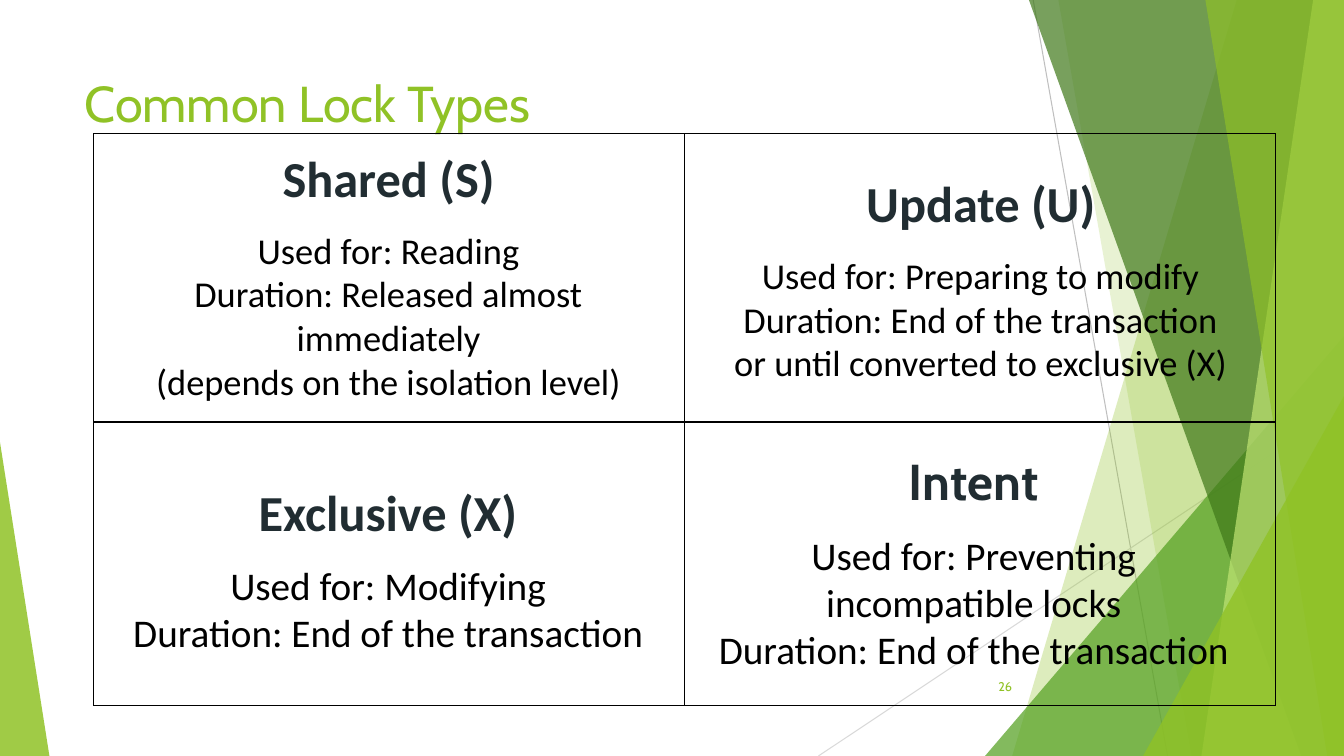
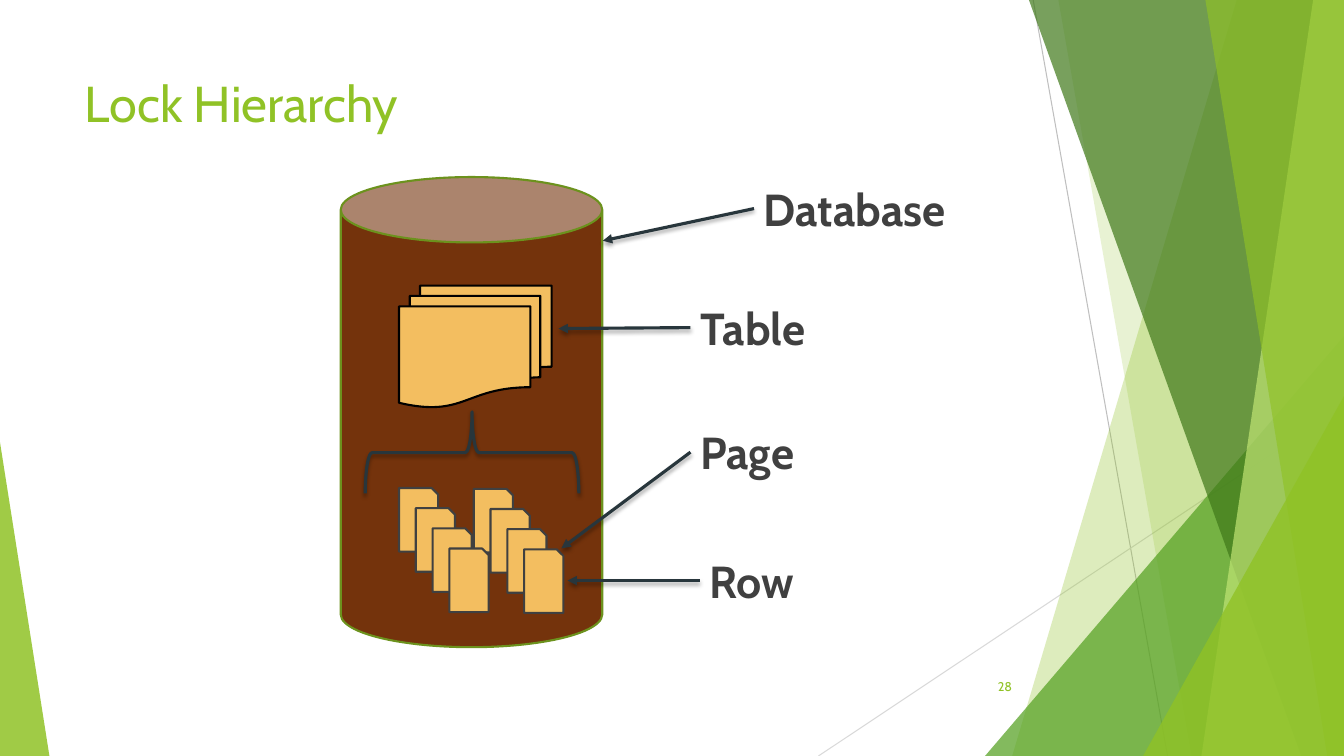
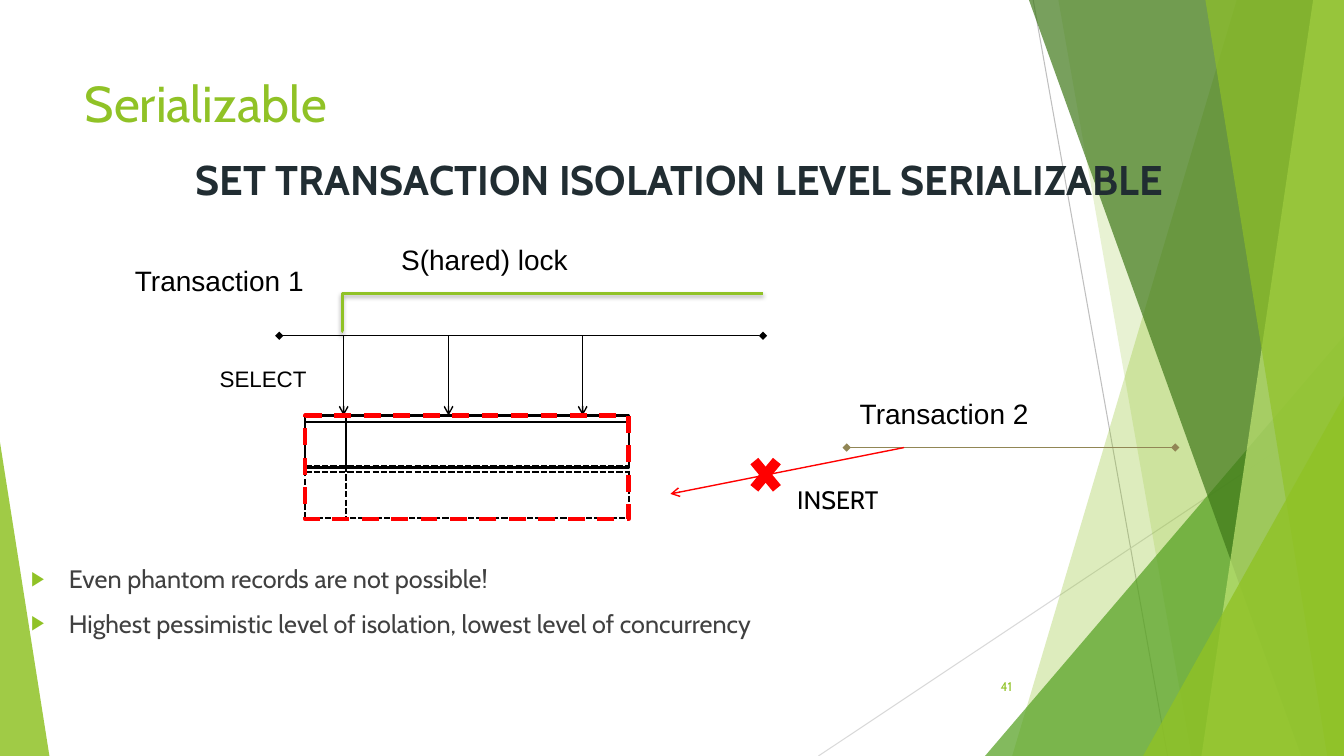
import dataclasses
import typing

import lxml.etree
import pptx
import pptx.dml.color
import pptx.enum.dml
import pptx.enum.shapes
import pptx.enum.text
import pptx.oxml.ns
import pptx.util

Pt = pptx.util.Pt
qn = pptx.oxml.ns.qn
SHAPE = pptx.enum.shapes.MSO_SHAPE
LINK = pptx.enum.shapes.MSO_CONNECTOR
DASH = pptx.enum.dml.MSO_LINE
ALIGN = pptx.enum.text.PP_ALIGN
ANCHOR = pptx.enum.text.MSO_ANCHOR
Box = tuple[float, float, float, float]
Spot = tuple[float, float]

WIDE, HIGH = 960, 540
GREEN, INK, SLATE, GREY = "90C226", "212D32", "28363C", "404040"
BLACK, RED, SAND, BROWN = "000000", "FF0000", "F3BE60", "74330C"
HEAD, BODY, PLAIN = "Cabin", "Calibri", "Arial"


@dataclasses.dataclass(frozen=True)
class Band:
    """A full-height strip that runs to the right edge."""
    top: float
    foot: float
    color: str
    alpha: int


@dataclasses.dataclass(frozen=True)
class Wedge:
    box: Box
    tip: int
    color: str
    alpha: int


@dataclasses.dataclass(frozen=True)
class Font:
    size: float
    name: str = HEAD
    color: str = BLACK
    bold: bool = False


@dataclasses.dataclass(frozen=True)
class Lock:
    box: Box
    name: str
    lines: tuple[str, ...]
    size: float
    face: str = BODY


@dataclasses.dataclass(frozen=True)
class Level:
    name: str
    left: float
    top: float
    target: Spot


@dataclasses.dataclass(frozen=True)
class Note:
    text: str
    box: Box
    font: Font


BACKDROP = (
    Band(883.4, 723, GREEN, 30),
    Band(756, 851, GREEN, 20),
    Wedge((703.6, 240, 256.4, 300), 1, "54A021", 72),
    Band(735, 929.5, "3F7819", 70),
    Band(938, 858.2, "C0E474", 70),
    Band(861, 948, GREEN, 65),
    Wedge((816.5, 283, 143.5, 257), 1, GREEN, 80),
    Wedge((0, 316, 35.3, 224), 0, GREEN, 85),
)
RULES = (
    ((738, 0), (834, 540), "BFBFBF"),
    ((960, 290), (584.6, 540), "D9D9D9"),
)
LOCKS = (
    Lock((70.6, 101.5, 414, 191.5), "Shared (S)",
         ("Used for: Reading", "Duration: Released almost immediately",
          "(depends on the isolation level)"), 26),
    Lock((509.8, 119.5, 381.6, 160), "Update (U)",
         ("Used for: Preparing to modify",
          "Duration: End of the transaction or until converted to exclusive (X)"), 26),
    Lock((86.4, 340, 381.6, 133), "Exclusive (X)",
         ("Used for: Modifying", "Duration: End of the transaction"), 28),
    Lock((504, 318.2, 383, 167), "Intent",
         ("Used for: Preventing incompatible locks",
          "Duration: End of the transaction"), 28, HEAD),
)
LEVELS = (
    Level("Database", 538.6, 126, (430.6, 172)),
    Level("Table", 493.2, 211, (398.9, 234.7)),
    Level("Page", 493.2, 300, (401, 391.7)),
    Level("Row", 499.7, 391.7, (405.4, 414.7)),
)
NOTES = (
    Note("Transaction 1", (89.3, 185, 141.8, 31.7), Font(20, PLAIN)),
    Note("S(hared) lock", (279.4, 170, 181.4, 31.7), Font(20, PLAIN)),
    Note("SELECT", (149.8, 257, 92.2, 26.6), Font(16, PLAIN)),
    Note("INSERT", (562.3, 342.7, 82, 28.8), Font(18)),
    Note("Transaction 2", (607, 279.4, 165, 31.7), Font(20, PLAIN)),
)


def tint(value: str) -> pptx.dml.color.RGBColor:
    return pptx.dml.color.RGBColor.from_string(value)


def node(parent: typing.Any, tag: str, **attrs: object) -> typing.Any:
    return lxml.etree.SubElement(
        parent, qn(tag), {key: str(val) for key, val in attrs.items()})


def soften(effects: typing.Any) -> None:
    """Put a soft drop shadow in an effect list."""
    drop = node(effects, "a:outerShdw", blurRad=Pt(3), dist=Pt(2),
                dir=5400000, rotWithShape=0)
    node(node(drop, "a:srgbClr", val=BLACK), "a:alpha", val=35000)


def paint(shape: typing.Any, fill: str = "", line: str = "", width: float = 1.5,
          alpha: int = 100) -> None:
    shape.shadow.inherit = False
    if fill:
        shape.fill.solid()
        shape.fill.fore_color.rgb = tint(fill)
        if alpha < 100:
            color = shape.element.spPr.find(qn("a:solidFill"))[0]
            node(color, "a:alpha", val=alpha * 1000)
    else:
        shape.fill.background()
    if line:
        shape.line.color.rgb = tint(line)
        shape.line.width = Pt(width)
    else:
        shape.line.fill.background()


def add_shape(slide: typing.Any, kind: typing.Any, box: Box, fill: str = "",
              line: str = "", width: float = 1.5) -> typing.Any:
    shape = slide.shapes.add_shape(kind, *map(Pt, box))
    paint(shape, fill, line, width)
    return shape


def add_line(slide: typing.Any, start: Spot, end: Spot, color: str = BLACK,
             width: float = 1, head: str = "", tail: str = "", soft: bool = False,
             kind: typing.Any = LINK.STRAIGHT) -> typing.Any:
    line = slide.shapes.add_connector(kind, *map(Pt, start + end))
    line.line.color.rgb = tint(color)
    line.line.width = Pt(width)
    props = line.element.spPr
    for tag, mark in (("a:headEnd", head), ("a:tailEnd", tail)):
        if mark:
            node(props.find(qn("a:ln")), tag, type=mark)
    effects = node(props, "a:effectLst")
    if soft:
        soften(effects)
    return line


def style(para: typing.Any, font: Font, align: typing.Any = ALIGN.LEFT) -> None:
    para.alignment = align
    para.font.size = Pt(font.size)
    para.font.name = font.name
    para.font.bold = font.bold
    para.font.color.rgb = tint(font.color)


def add_text(slide: typing.Any, box: Box, lines: typing.Sequence[tuple[str, Font]],
             align: typing.Any = ALIGN.LEFT) -> typing.Any:
    """Add a text box with one paragraph for each line."""
    label = slide.shapes.add_textbox(*map(Pt, box))
    frame = label.text_frame
    frame.word_wrap = True
    frame.text = "\n".join(text for text, _ in lines)
    for para, (_, font) in zip(frame.paragraphs, lines):
        style(para, font, align)
    return label


def place(shape: typing.Any, box: Box) -> None:
    shape.left, shape.top, shape.width, shape.height = map(Pt, box)
    frame = shape.text_frame
    frame.auto_size = pptx.enum.text.MSO_AUTO_SIZE.NONE
    frame.vertical_anchor = ANCHOR.TOP


def add_slide(deck: typing.Any, layout: int, title: str, number: int) -> typing.Any:
    slide = deck.slides.add_slide(deck.slide_layouts[layout])
    place(slide.shapes.title, (53.3, 48.2, 676.8, 103.7))
    slide.shapes.title.text_frame.text = title
    style(slide.shapes.title.text_frame.paragraphs[0], Font(36, color=GREEN))
    page = add_text(slide, (676, 476, 54, 28.8),
                    [(str(number), Font(9, color=GREEN))], ALIGN.RIGHT)
    page.text_frame.vertical_anchor = ANCHOR.MIDDLE
    return slide


def add_backdrop(deck: typing.Any, slide: typing.Any) -> None:
    """Draw the shared artwork and move it behind everything on the master."""
    parts = [add_line(slide, start, end, color, 0.75) for start, end, color in RULES]
    for item in BACKDROP:
        if isinstance(item, Band):
            pen = slide.shapes.build_freeform(Pt(item.top), 0)
            pen.add_line_segments([(Pt(x), Pt(y)) for x, y in (
                (WIDE, 0), (WIDE, HIGH), (item.foot, HIGH))])
            part = pen.convert_to_shape()
        else:
            part = add_shape(slide, SHAPE.ISOSCELES_TRIANGLE, item.box)
            part.adjustments[0] = item.tip
        paint(part, item.color, alpha=item.alpha)
        parts.append(part)
    tree = deck.slide_master.shapes.element
    for index, part in enumerate(parts):
        part.element[0][0].set("id", str(100 + index))
        tree.insert(2 + index, part.element)


def frame_cell(cell: typing.Any) -> None:
    """Clear a cell's fill and give it black borders."""
    cell.fill.background()
    props = cell._tc.get_or_add_tcPr()
    for index, side in enumerate("LRTB"):
        edge = node(props, f"a:ln{side}", w=Pt(1))
        node(node(edge, "a:solidFill"), "a:srgbClr", val=BLACK)
        props.insert(index, edge)


def draw_types(slide: typing.Any) -> None:
    grid = slide.shapes.add_table(2, 2, *map(Pt, (67, 95.5, 844, 408.2))).table
    grid.first_row = grid.horz_banding = False
    for row, height in zip(grid.rows, (206, 202.2)):
        row.height = Pt(height)
        for cell in row.cells:
            frame_cell(cell)
    for lock in LOCKS:
        lines = [(lock.name, Font(36, lock.face, INK, True))]
        lines += [(text, Font(lock.size, BODY)) for text in lock.lines]
        label = add_text(slide, lock.box, lines, ALIGN.CENTER)
        label.text_frame.paragraphs[0].space_after = Pt(14.5)


def draw_levels(slide: typing.Any) -> None:
    add_shape(slide, SHAPE.CAN, (243.4, 126.5, 186.8, 335.8), BROWN, "6C921D")
    add_shape(slide, SHAPE.FLOWCHART_MULTIDOCUMENT, (285, 204, 109, 87), SAND, BLACK)
    for step in range(4):
        for left, top in ((285, 348.6), (338.4, 349.2)):
            add_shape(slide, SHAPE.SNIP_1_RECTANGLE,
                      (left + 12 * step, top + 14.4 * step, 28, 45.4), SAND, GREY)
    brace = add_shape(slide, SHAPE.LEFT_BRACE, (308, 247, 58.3, 152.6),
                      line=SLATE, width=2.25)
    brace.rotation = 90
    soften(brace.element.spPr.find(qn("a:effectLst")))
    add_shape(slide, SHAPE.RECTANGLE, (376, 408.2, 25, 10.8), SAND)
    for level in LEVELS:
        label = add_text(slide, (level.left, level.top, 148.3, 46),
                         [(level.name, Font(32, color=GREY, bold=True))])
        arrow = add_line(slide, (level.left, level.top + 23), level.target, SLATE,
                         2.25, tail="triangle", soft=True)
        arrow.begin_connect(label, 1)


def fill_body(slide: typing.Any, points: typing.Sequence[str]) -> None:
    body = slide.placeholders[1]
    place(body, (15, 399, 929.5, 130.3))
    body.text_frame.text = "\n".join(points)
    for para in body.text_frame.paragraphs:
        style(para, Font(18, color=GREY))
        para.space_before = Pt(10)
        props = para._p.get_or_add_pPr()
        props.set("marL", str(Pt(27)))
        props.set("indent", str(Pt(-27)))
        defaults = props.find(qn("a:defRPr"))
        node(node(props, "a:buClr"), "a:srgbClr", val=GREEN)
        node(props, "a:buSzPct", val=80000)
        node(props, "a:buFont", typeface=PLAIN)
        node(props, "a:buChar", char="▶")
        props.append(defaults)


def draw_serial(slide: typing.Any) -> None:
    fill_body(slide, ("Even phantom records are not possible!",
                      "Highest pessimistic level of isolation, lowest level of concurrency"))
    left, top, width, height = 218, 296.8, 231, 37.2
    axis = 239.8
    add_line(slide, (199.5, axis), (545, axis), head="diamond", tail="diamond")
    for x in (245.5, 320.4, 416.2):
        add_line(slide, (x, axis), (x, top), tail="arrow")
    for y, dash in ((top, None), (top + 36, DASH.SQUARE_DOT)):
        store = add_shape(slide, SHAPE.FLOWCHART_INTERNAL_STORAGE,
                          (left, y, width, height), line=BLACK)
        store.line.dash_style = dash
    span = add_line(slide, (244.8, 237), (545, 209.5), GREEN, 2, soft=True,
                    kind=LINK.ELBOW)
    shape = span.element.spPr.find(qn("a:prstGeom"))
    node(shape.find(qn("a:avLst")), "a:gd", name="adj1", fmla="val -100")
    add_line(slide, (604.8, 319.7), (839.5, 319.7), "918655",
             head="diamond", tail="diamond")
    add_line(slide, (645.8, 319.7), (478.8, 352.8), RED, tail="arrow")
    add_shape(slide, SHAPE.MATH_MULTIPLY, (531.4, 320.4, 31, 37.4), RED)
    scope = add_shape(slide, SHAPE.RECTANGLE, (left, top, width, 74), line=RED, width=3)
    scope.line.dash_style = DASH.DASH
    for note in NOTES:
        add_text(slide, note.box, [(note.text, note.font)])
    banner = add_text(slide, (131.8, 103, 707.8, 48.2),
                      [("SET TRANSACTION ISOLATION LEVEL SERIALIZABLE",
                        Font(29.6, color=INK, bold=True))], ALIGN.CENTER)
    banner.text_frame.margin_left = banner.text_frame.margin_right = 0
    para = banner.text_frame.paragraphs[0]
    para.line_spacing = 1.1
    para.space_before = Pt(6)


def main() -> None:
    deck = pptx.Presentation()
    deck.slide_width, deck.slide_height = Pt(WIDE), Pt(HIGH)
    types = add_slide(deck, 5, "Common Lock Types", 26)
    add_backdrop(deck, types)
    draw_types(types)
    draw_levels(add_slide(deck, 5, "Lock Hierarchy", 28))
    draw_serial(add_slide(deck, 1, "Serializable", 41))
    deck.save("out.pptx")


if __name__ == "__main__":
    main()
